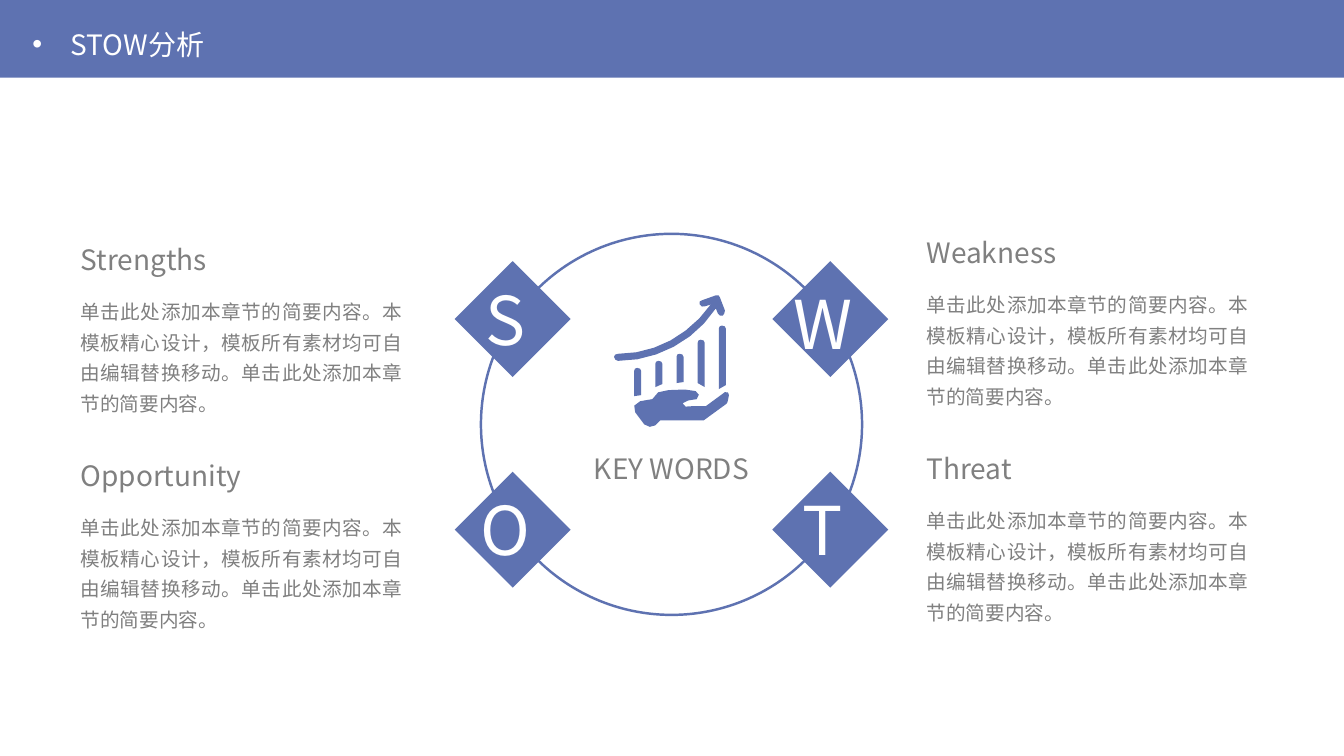
"""Build a SWOT slide: four lettered diamonds on a ring, with a text beside each."""
from lxml import etree
from pptx import Presentation
from pptx import util as u
from pptx.dml.color import RGBColor
from pptx.enum import shapes, text
from pptx.oxml.ns import qn

BLUE = RGBColor(0x5E, 0x72, 0xB1)
GRAY = RGBColor(0x80, 0x80, 0x80)
WHITE = RGBColor(0xFF, 0xFF, 0xFF)
FONT = "Noto Sans CJK SC"
WIDE, HIGH = 13.33, 7.5

TITLE = "STOW分析"
CORE = "KEY WORDS"
BODY = "单击此处添加本章节的简要内容。本模板精心设计，模板所有素材均可自由编辑替换移动。单击此处添加本章节的简要内容。"
# fields: mark, heading, column, row, mark top
PARTS = [
    ("S", "Strengths", 0, 0, 2.71),
    ("W", "Weakness", 1, 0, 2.75),
    ("O", "Opportunity", 0, 1, 4.8),
    ("T", "Threat", 1, 1, 4.8),
]
COLS = [(0.7, 2.36), (9.09, 2.29)]
ROW = 2.14
MID = (6.66, 4.21)
RING, GEM = 3.78, 1.15
STEP = (3.15, 2.09)
UNIT = 1000

HAND = [
    (6.35, 3.98), (6.47, 3.96), (6.49, 3.9, 6.55, 3.87, 6.63, 3.87),
    (6.77, 3.87, 6.83, 3.85, 6.9, 3.88), (6.94, 3.9, 6.94, 3.93, 6.91, 3.96),
    (6.88, 3.99, 6.77, 3.95, 6.77, 4), (6.77, 4.05, 6.82, 4.03, 6.86, 4.03),
    (7, 4.03), (7.19, 3.89), (7.21, 3.88, 7.24, 3.9, 7.23, 3.92),
    (7.22, 3.97), (7.22, 3.99, 7.21, 4, 7.2, 4.01), (6.98, 4.17),
    (6.55, 4.17), (6.5, 4.22), (6.47, 4.24, 6.42, 4.24, 6.39, 4.21),
    (6.3, 4.09), (6.27, 4.05, 6.29, 3.99, 6.35, 3.98),
]
ARROW = [
    (7.1, 3.06), (6.89, 3.38, 6.52, 3.58, 6.13, 3.58),
    (6.11, 3.58, 6.09, 3.56, 6.09, 3.54), (6.09, 3.52, 6.11, 3.51, 6.13, 3.51),
    (6.5, 3.51, 6.84, 3.32, 7.05, 3.02), (6.99, 3.04),
    (6.97, 3.05, 6.95, 3.04, 6.94, 3.02), (6.93, 3, 6.94, 2.98, 6.96, 2.98),
    (7.1, 2.93), (7.12, 2.92, 7.14, 2.93, 7.14, 2.95), (7.19, 3.08),
    (7.19, 3.1, 7.18, 3.12, 7.17, 3.13), (7.15, 3.14, 7.13, 3.13, 7.12, 3.11),
]
# fields: top, left foot, right foot
BARS = [(3.65, 3.93, 3.92), (3.58, 3.84, 3.81), (3.51, 3.8, 3.79),
        (3.37, 3.8, 3.84), (3.23, 3.86, 3.82)]


def write(box, words, size=20, color=GRAY, align=text.PP_ALIGN.LEFT, space=None):
    frame = box.text_frame
    frame.word_wrap = True
    frame.auto_size = text.MSO_AUTO_SIZE.SHAPE_TO_FIT_TEXT
    frame.vertical_anchor = text.MSO_ANCHOR.TOP
    para = frame.paragraphs[0]
    para.alignment = align
    if space:
        para.line_spacing = space
    run = para.add_run()
    run.text = words
    run.font.size = u.Pt(size)
    run.font.name = FONT
    run.font.color.rgb = color
    etree.SubElement(run.font._element, qn("a:ea"), typeface=FONT)
    return para


def place(item, *area):
    item.left, item.top, item.width, item.height = map(u.Inches, area)


def label(slide, area, words, **style):
    box = slide.shapes.add_textbox(*map(u.Inches, area))
    write(box, words, **style)


def paint(item, fill=BLUE, line=None):
    item.shadow.inherit = False
    if fill is None:
        item.fill.background()
    else:
        item.fill.solid()
        item.fill.fore_color.rgb = fill
    if line is None:
        item.line.fill.background()
    else:
        item.line.color.rgb = line
        item.line.width = u.Pt(1.75)


def draw(slide, kind, area, **style):
    item = slide.shapes.add_shape(kind, *map(u.Inches, area))
    paint(item, **style)
    return item


def trace(nodes):
    dots = [nodes[0]]
    for node in nodes[1:]:
        if len(node) == 2:
            dots.append(node)
            continue
        ctrl = [dots[-1], node[:2], node[2:4], node[4:]]
        count = 6 if abs(node[4] - ctrl[0][0]) > 0.5 else 2
        for i in range(1, count + 1):
            t = i / count
            mix = ((1 - t) ** 3, 3 * t * (1 - t) ** 2, 3 * t * t * (1 - t), t ** 3)
            dots.append(tuple(sum(m * c[k] for m, c in zip(mix, ctrl)) for k in (0, 1)))
    return [(x * UNIT, y * UNIT) for x, y in dots]


def bar(i, top, left, right):
    x = 6.29 + 0.21 * i
    mid, end, low = x + 0.03, x + 0.07, top + 0.03
    return [(end, right), (end, low), (end, top + 0.01, mid + 0.02, top, mid, top),
            (mid - 0.02, top, x, top + 0.01, x, low), (x, left)]


def icon(slide):
    first, *rest = [trace(p) for p in [HAND, ARROW] + [bar(i, *b) for i, b in enumerate(BARS)]]
    pen = slide.shapes.build_freeform(*first[0], scale=u.Inches(1) / UNIT)
    pen.add_line_segments(first[1:], close=True)
    for dots in rest:
        pen.move_to(*dots[0])
        pen.add_line_segments(dots[1:], close=True)
    paint(pen.convert_to_shape())


def head(slide):
    title = slide.shapes.title
    band = draw(slide, shapes.MSO_SHAPE.RECTANGLE, (0, 0, WIDE, 0.77))
    title._element.addprevious(band._element)
    place(title, 0.22, 0.22, 4.01, 0.44)
    props = write(title, TITLE, color=WHITE)._p.get_or_add_pPr()
    props.set("marL", str(u.Inches(0.38)))
    props.set("indent", str(u.Inches(-0.38)))
    etree.SubElement(props, qn("a:buFont"), typeface="Arial")
    etree.SubElement(props, qn("a:buChar"), char="•")


def main():
    deck = Presentation()
    deck.slide_width, deck.slide_height = u.Inches(WIDE), u.Inches(HIGH)
    slide = deck.slides.add_slide(deck.slide_layouts[5])
    head(slide)
    mid = text.PP_ALIGN.CENTER
    ring = (MID[0] - RING / 2, MID[1] - RING / 2, RING, RING)
    draw(slide, shapes.MSO_SHAPE.OVAL, ring, fill=None, line=BLUE)
    for mark, name, col, row, top in PARTS:
        x = MID[0] + (col - 0.5) * STEP[0]
        y = MID[1] + (row - 0.5) * STEP[1]
        draw(slide, shapes.MSO_SHAPE.DIAMOND, (x - GEM / 2, y - GEM / 2, GEM, GEM))
        label(slide, (x - 0.63, top, 1.11, 0.91), mark, size=48, color=WHITE, align=mid)
        left, start = COLS[col]
        y = start + row * ROW
        label(slide, (left, y, 2.11, 0.44), name)
        label(slide, (left, y + 0.5, 3.39, 1.3), BODY, size=14,
              align=text.PP_ALIGN.JUSTIFY, space=1.3)
    label(slide, (MID[0] - 1.1, 4.43, 2.2, 0.44), CORE, align=mid)
    icon(slide)
    deck.save("out.pptx")


if __name__ == "__main__":
    main()
